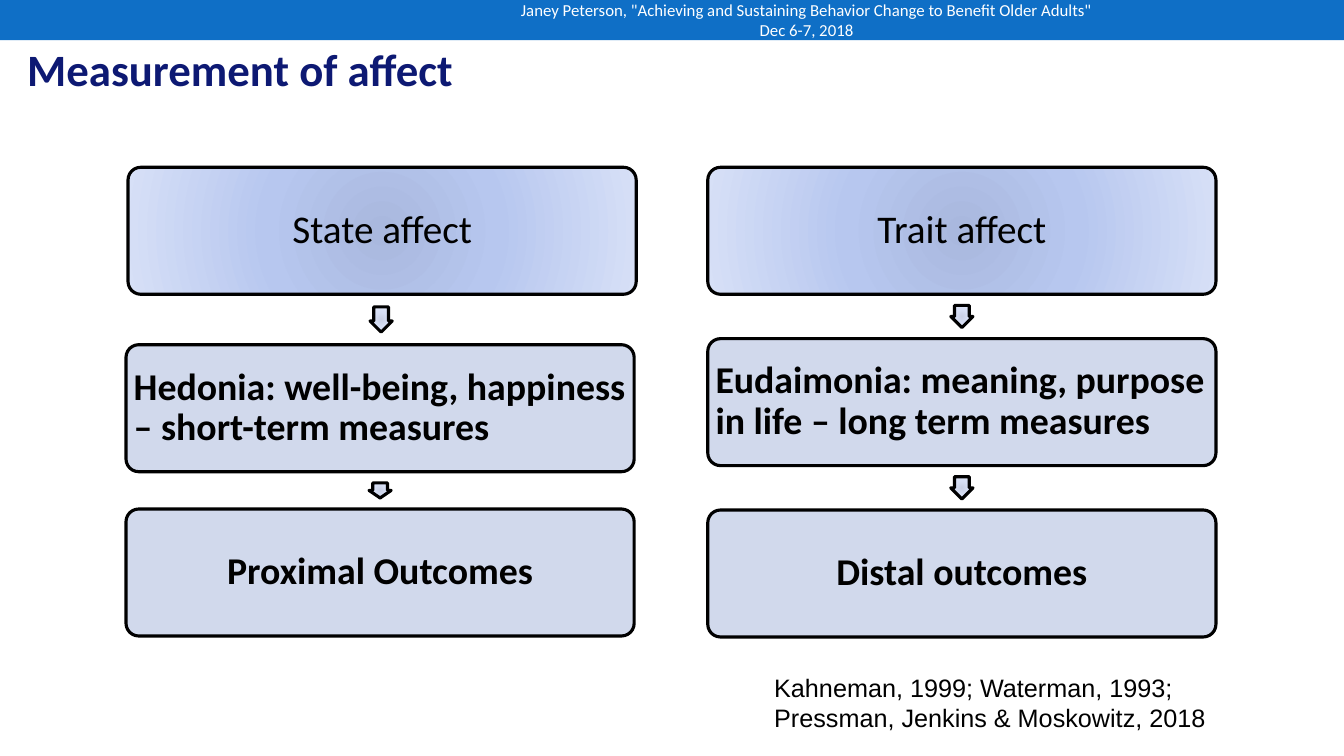
from lxml import etree
from pptx import Presentation
from pptx.dml.color import RGBColor
from pptx.enum.shapes import MSO_SHAPE
from pptx.enum.text import MSO_ANCHOR, MSO_AUTO_SIZE, PP_ALIGN
from pptx.oxml.ns import qn
from pptx.util import Inches, Pt

LEFT, CENTER = PP_ALIGN.LEFT, PP_ALIGN.CENTER
TOP, MIDDLE = MSO_ANCHOR.TOP, MSO_ANCHOR.MIDDLE
RECTANGLE, ROUNDED, ARROW = MSO_SHAPE.RECTANGLE, MSO_SHAPE.ROUNDED_RECTANGLE, MSO_SHAPE.RIGHT_ARROW

TITLE = "Measurement of affect"
HEADER = 'Janey Peterson, "Achieving and Sustaining Behavior Change to Benefit Older Adults" Dec 6-7, 2018'
CITATION = "Kahneman, 1999; Waterman, 1993; Pressman, Jenkins & Moskowitz, 2018"

BOX_WIDTH, BOX_HEIGHT = 5.04, 1.26
ARROW_BREADTH = 0.22
HEAD_STOPS = [(0, "A9B8DE"), (45, "B7C7EF"), (100, "D7E0F7")]
ARROW_STOPS = [(0, "C9D0E5"), (45, "D7DFF5"), (100, "E8EDFA")]
BOX_COLOR, BOX_OPACITY = "CCD5EA", 90

COLUMNS = [
    {
        "boxes": [
            (1.27, 1.66, "State affect", CENTER),
            (1.25, 3.42, "Hedonia: well-being, happiness – short-term measures", LEFT),
            (1.25, 5.05, "Proximal Outcomes", CENTER),
        ],
        "arrow_lengths": [0.25, 0.15],
    },
    {
        "boxes": [
            (7.02, 1.66, "Trait affect", CENTER),
            (7.02, 3.36, "Eudaimonia: meaning, purpose in life – long term measures", LEFT),
            (7.02, 5.06, "Distal outcomes", CENTER),
        ],
        "arrow_lengths": [0.22, 0.22],
    },
]


def rgb(color):
    return RGBColor.from_string(color)


def place(shape, left, top, width, height):
    shape.left, shape.top = Inches(left), Inches(top)
    shape.width, shape.height = Inches(width), Inches(height)


def write(shape, text, size, color, font="Calibri", bold=False, align=LEFT, anchor=TOP):
    frame = shape.text_frame
    frame.word_wrap = True
    frame.vertical_anchor = anchor
    paragraph = frame.paragraphs[0]
    paragraph.alignment = align
    run = paragraph.add_run()
    run.text = text
    run.font.name, run.font.size, run.font.bold = font, Pt(size), bold
    run.font.color.rgb = rgb(color)
    return frame


def add_text(slide, area, *args, **style):
    return write(slide.shapes.add_textbox(*map(Inches, area)), *args, **style)


def add_outlined(slide, kind, left, top, width, height):
    shape = slide.shapes.add_shape(kind, *map(Inches, (left, top, width, height)))
    shape.shadow.inherit = False
    shape.line.color.rgb = rgb("000000")
    shape.line.width = Pt(2.25)
    return shape


def fill_radial(shape, stops):
    shape.fill.gradient()
    gradient = shape.fill._xPr.find(qn("a:gradFill"))
    for child in list(gradient):
        gradient.remove(child)
    stop_list = etree.SubElement(gradient, qn("a:gsLst"))
    for position, color in stops:
        stop = etree.SubElement(stop_list, qn("a:gs"), pos=str(position * 1000))
        etree.SubElement(stop, qn("a:srgbClr"), val=color)
    circle = etree.SubElement(gradient, qn("a:path"), path="circle")
    etree.SubElement(circle, qn("a:fillToRect"), {side: "100000" for side in "ltrb"})


def fill_translucent(shape, color, opacity):
    shape.fill.solid()
    shape.fill.fore_color.rgb = rgb(color)
    tint = shape.fill._xPr.find(qn("a:solidFill")).find(qn("a:srgbClr"))
    etree.SubElement(tint, qn("a:alpha"), val=str(opacity * 1000))


def add_box(slide, left, top, text, align, is_head):
    box = add_outlined(slide, ROUNDED, left, top, BOX_WIDTH, BOX_HEIGHT)
    box.adjustments[0] = 0.1
    if is_head:
        fill_radial(box, HEAD_STOPS)
    else:
        fill_translucent(box, BOX_COLOR, BOX_OPACITY)
    frame = write(box, text, 28 if is_head else 27, "000000",
                  bold=not is_head, align=align, anchor=MIDDLE)
    frame.margin_left = frame.margin_right = Inches(0.04)
    frame.margin_top = frame.margin_bottom = Inches(0.04)
    frame.paragraphs[0].line_spacing = 0.9


def add_arrow(slide, upper, lower, length):
    center_x = (upper[0] + lower[0] + BOX_WIDTH) / 2
    center_y = (upper[1] + BOX_HEIGHT + lower[1]) / 2
    arrow = add_outlined(slide, ARROW, center_x - length / 2, center_y - ARROW_BREADTH / 2,
                         length, ARROW_BREADTH)
    arrow.rotation = 90
    arrow.adjustments[0], arrow.adjustments[1] = 0.667, 0.5
    fill_radial(arrow, ARROW_STOPS)


def main():
    presentation = Presentation()
    presentation.slide_width, presentation.slide_height = Inches(13.33), Inches(7.5)
    slide = presentation.slides.add_slide(presentation.slide_layouts[5])

    band = slide.shapes.add_shape(RECTANGLE, 0, 0, presentation.slide_width, Inches(0.4))
    band.shadow.inherit = False
    band.fill.solid()
    band.fill.fore_color.rgb = rgb("0F6FC6")
    band.line.fill.background()

    title = slide.shapes.title
    place(title, 0.17, 0.36, 9.58, 0.64)
    write(title, TITLE, 32, "0D1973", bold=True).auto_size = MSO_AUTO_SIZE.SHAPE_TO_FIT_TEXT

    for column in COLUMNS:
        boxes = column["boxes"]
        for index, box in enumerate(boxes):
            add_box(slide, *box, is_head=index == 0)
        for upper, lower, length in zip(boxes, boxes[1:], column["arrow_lengths"]):
            add_arrow(slide, upper, lower, length)

    add_text(slide, (7.58, 6.62, 4.75, 0.71), CITATION, 18, "000000", font="Arial")
    add_text(slide, (5, 0.02, 6, 0.36), HEADER, 12, "FFFFFF", align=CENTER, anchor=MIDDLE)
    presentation.save("out.pptx")


if __name__ == "__main__":
    main()
